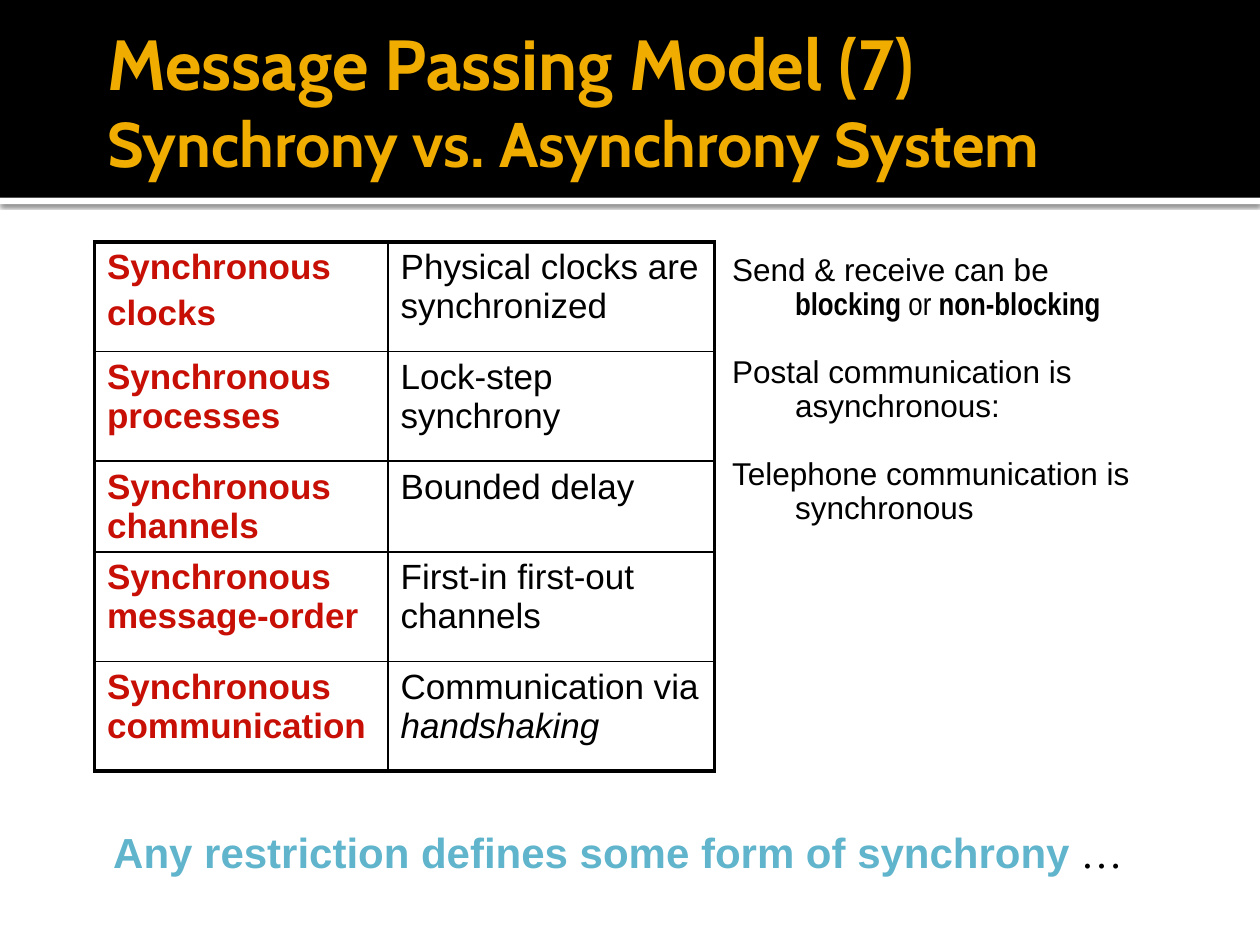
"""Build the slide on synchronous and asynchronous message passing."""
import pptx
import pptx.dml.color
import pptx.enum.shapes
import pptx.enum.text
import pptx.oxml
import pptx.oxml.ns
import pptx.util
from pptx.util import Inches

BLACK, WHITE, GOLD, RED, SKY = "000000", "FFFFFF", "F0AD00", "C70F05", "60B5CC"
THIN, THICK = 1, 2.25
SYNCHRONY = [
    (["Synchronous", "clocks"], [("Physical clocks are synchronized", False)]),
    (["Synchronous processes"], [("Lock-step synchrony", False)]),
    (["Synchronous channels"], [("Bounded delay", False)]),
    (["Synchronous message-order"], [("First-in first-out channels", False)]),
    (["Synchronous communication"], [("Communication via ", False), ("handshaking", True)]),
]
ROW_HEIGHTS = [0.87, 0.87, 0.72, 0.87, 0.87]
COLUMN_WIDTHS = [2.33, 2.59]
NARROW = "Arial Narrow"
EXAMPLES = [
    [("Send & receive can be ", "Arial", False), ("blocking", NARROW, True),
     (" or ", NARROW, False), ("non-blocking", NARROW, True)],
    [("Postal communication is asynchronous:", "Arial", False)],
    [("Telephone communication is synchronous", "Arial", False)],
]


def rgb(value):
    """Return the colour for a hex string."""
    return pptx.dml.color.RGBColor.from_string(value)


def xml(markup):
    """Parse one DrawingML element written with the a: prefix."""
    head, tail = markup.split(">", 1)
    closing = "/" if head.endswith("/") else ""
    return pptx.oxml.parse_xml(
        f"{head.rstrip('/')} {pptx.oxml.ns.nsdecls('a')}{closing}>{tail}")


def write(paragraph, text, size=20, font="Arial", color=BLACK, bold=False, italic=False):
    """Add a formatted run to a paragraph."""
    run = paragraph.add_run()
    run.text = text
    run.font.size = pptx.util.Pt(size)
    run.font.name = font
    run.font.color.rgb = rgb(color)
    run.font.bold = bold
    run.font.italic = italic


def place(shape, left, top, width, height):
    """Move and size a shape in inches."""
    shape.left, shape.top = Inches(left), Inches(top)
    shape.width, shape.height = Inches(width), Inches(height)


def set_margins(frame, left, top, right, bottom):
    """Set the insets of a wrapped text frame in inches."""
    frame.margin_left, frame.margin_top = Inches(left), Inches(top)
    frame.margin_right, frame.margin_bottom = Inches(right), Inches(bottom)
    frame.word_wrap = True
    frame.auto_size = pptx.enum.text.MSO_AUTO_SIZE.NONE


def add_band(slide, top, height, color):
    """Add a full-width band behind everything else."""
    band = slide.shapes.add_shape(
        pptx.enum.shapes.MSO_SHAPE.RECTANGLE, 0, Inches(top), Inches(10), Inches(height))
    band.shadow.inherit = False
    band.fill.solid()
    band.fill.fore_color.rgb = rgb(color)
    band.line.fill.background()
    slide.shapes._spTree.insert(2, band._element)
    return band


def add_soft_shadow(shape):
    """Give a shape a short shadow straight below it."""
    effects = shape._element.spPr.find(pptx.oxml.ns.qn("a:effectLst"))
    effects.append(xml(
        '<a:outerShdw blurRad="31750" dist="10160" dir="5400000" rotWithShape="0">'
        f'<a:srgbClr val="{BLACK}"><a:alpha val="60000"/></a:srgbClr></a:outerShdw>'))


def fill_title(title):
    """Place the two-line title on the dark band."""
    place(title, 0.75, 0.17, 8.5, 1.25)
    frame = title.text_frame
    set_margins(frame, 0.1, 0.05, 0.05, 0.05)
    frame.vertical_anchor = pptx.enum.text.MSO_ANCHOR.MIDDLE
    heading = frame.paragraphs[0]
    heading.alignment = pptx.enum.text.PP_ALIGN.LEFT
    write(heading, "Message Passing Model (7)", size=40.5, font="Cabin", color=GOLD, bold=True)
    heading.add_line_break()
    write(heading, "Synchrony vs. Asynchrony System", size=36, font="Cabin", color=GOLD, bold=True)


def fill_examples(body):
    """Write the communication examples with hanging indents."""
    place(body, 5.75, 1.92, 3.42, 4.5)
    frame = body.text_frame
    set_margins(frame, 0.06, 0.1, 0.1, 0.05)
    for index, parts in enumerate(EXAMPLES):
        example = frame.add_paragraph() if index else frame.paragraphs[0]
        example.line_spacing = 0.9
        example.space_before = pptx.util.Pt(19.4 if index else 0)
        properties = example._p.get_or_add_pPr()
        properties.set("marL", str(Inches(0.5)))
        properties.set("indent", str(Inches(-0.5)))
        properties.append(xml("<a:buNone/>"))
        for text, font, bold in parts:
            write(example, text, size=18, font=font, bold=bold)


def set_borders(cell, **widths):
    """Draw black cell borders, given in the order L, R, T, B."""
    properties = cell._tc.get_or_add_tcPr()
    for index, (side, width) in enumerate(widths.items()):
        properties.insert(index, xml(
            f'<a:ln{side} w="{int(pptx.util.Pt(width))}"><a:solidFill>'
            f'<a:srgbClr val="{BLACK}"/></a:solidFill></a:ln{side}>'))


def add_synchrony_table(slide):
    """Add the table of synchrony kinds with a heavy outer frame."""
    table = slide.shapes.add_table(
        len(SYNCHRONY), 2, Inches(0.75), Inches(1.92),
        Inches(sum(COLUMN_WIDTHS)), Inches(sum(ROW_HEIGHTS))).table
    table.first_row = table.horz_banding = False
    for column, width in zip(table.columns, COLUMN_WIDTHS):
        column.width = Inches(width)
    for index, (kind, meaning) in enumerate(SYNCHRONY):
        table.rows[index].height = Inches(ROW_HEIGHTS[index])
        kind_cell, meaning_cell = table.cell(index, 0), table.cell(index, 1)
        top = THICK if index == 0 else THIN
        bottom = THICK if index == len(SYNCHRONY) - 1 else THIN
        for cell in (kind_cell, meaning_cell):
            cell.fill.background()
        set_borders(kind_cell, L=THICK, R=THIN, T=top, B=bottom)
        set_borders(meaning_cell, L=THIN, R=THICK, T=top, B=bottom)
        for line, text in enumerate(kind):
            frame = kind_cell.text_frame
            paragraph = frame.add_paragraph() if line else frame.paragraphs[0]
            if line:
                paragraph.space_before = pptx.util.Pt(4)
            write(paragraph, text, color=RED, bold=True)
        for text, italic in meaning:
            write(meaning_cell.text_frame.paragraphs[0], text, italic=italic)


def add_conclusion(slide):
    """Add the closing remark below the table."""
    conclusion = slide.shapes.add_textbox(Inches(0.8), Inches(6.51), Inches(8.21), Inches(0.5))
    conclusion.text_frame.word_wrap = False
    remark = conclusion.text_frame.paragraphs[0]
    write(remark, "Any restriction defines some form of synchrony", size=24, color=SKY, bold=True)
    write(remark, " …", size=24, font="Times New Roman")


def main():
    """Build and save the slide."""
    deck = pptx.Presentation()
    deck.slide_width, deck.slide_height = Inches(10), Inches(7.5)
    slide = deck.slides.add_slide(deck.slide_layouts[1])
    add_band(slide, 0, 1.57, BLACK)
    add_soft_shadow(add_band(slide, 1.57, 0.05, WHITE))
    fill_title(slide.shapes.title)
    fill_examples(slide.placeholders[1])
    add_synchrony_table(slide)
    add_conclusion(slide)
    deck.save("out.pptx")


if __name__ == "__main__":
    main()
